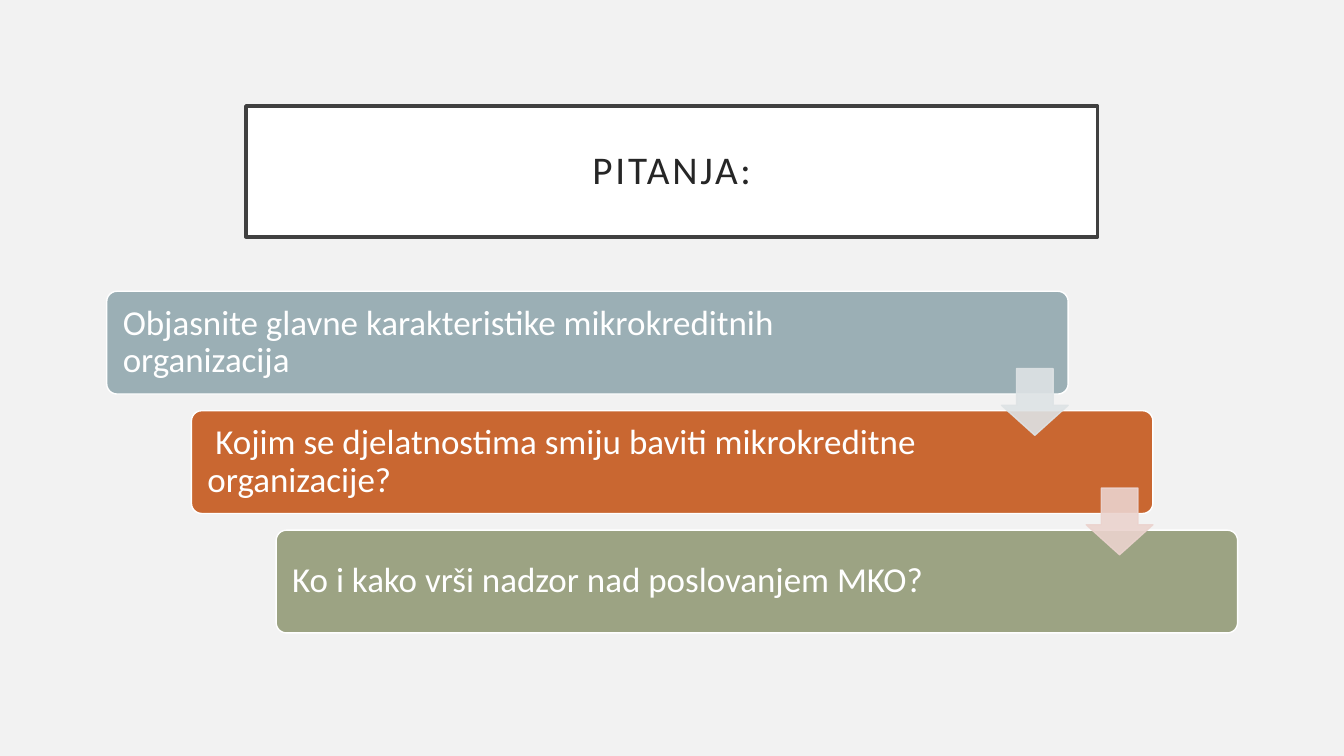
from lxml.etree import SubElement
from pptx import Presentation
from pptx.dml.color import RGBColor
from pptx.enum.shapes import MSO_SHAPE
from pptx.enum.text import MSO_ANCHOR, PP_ALIGN
from pptx.oxml.ns import qn
from pptx.util import Cm, Pt

COLOURS = {
    "background": "F2F2F2",
    "white": "FFFFFF",
    "title_border": "404040",
    "title_text": "262626",
    "blue_grey": "9BAFB5",
    "orange": "C96731",
    "olive": "9CA383",
    "pale_grey": "DEE3E5",
    "pale_rose": "EBD3CE",
}
QUESTIONS = [
    ("Objasnite glavne karakteristike mikrokreditnih organizacija", "blue_grey"),
    (" Kojim se djelatnostima smiju baviti mikrokreditne organizacije?", "orange"),
    ("Ko i kako vrši nadzor nad poslovanjem MKO?", "olive"),
]
ARROW_COLOURS = ["pale_grey", "pale_rose"]
TITLE_FRAME = {
    "word_wrap": True,
    "vertical_anchor": MSO_ANCHOR.MIDDLE,
    "margin_left": Cm(0.5),
    "margin_right": Cm(0.5),
    "margin_top": Cm(0.5),
    "margin_bottom": Cm(0.5),
}
QUESTION_FRAME = TITLE_FRAME | {
    "margin_left": Cm(0.33),
    "margin_right": Cm(2.97),
    "margin_top": Cm(0.33),
    "margin_bottom": Cm(0.33),
}


def rgb(colour):
    return RGBColor.from_string(COLOURS[colour])


def apply_format(target, values):
    for attribute, value in values.items():
        setattr(target, attribute, value)


def paint(part, fill, border, width):
    part.fill.solid()
    part.fill.fore_color.rgb = rgb(fill)
    part.line.color.rgb = rgb(border)
    part.line.width = Pt(width)


def write(part, wording, frame, size, colour, alignment):
    apply_format(part.text_frame, frame)
    paragraph = part.text_frame.paragraphs[0]
    apply_format(paragraph, {"alignment": alignment, "line_spacing": 0.9})
    run = paragraph.add_run()
    run.text = wording
    apply_format(run.font, {"name": "Calibri", "size": Pt(size), "bold": False})
    run.font.color.rgb = rgb(colour)
    return run


def add_part(slide, preset, box, adjustments):
    part = slide.shapes.add_shape(preset, *map(Cm, box))
    part.shadow.inherit = False
    for index, value in enumerate(adjustments):
        part.adjustments[index] = value
    return part


def place_title(slide, box):
    title = slide.shapes.title
    apply_format(title, dict(zip(("left", "top", "width", "height"), map(Cm, box))))
    paint(title, "white", "title_border", 2.5)
    run = write(title, "PITANJA:", TITLE_FRAME, 28, "title_text", PP_ALIGN.CENTER)
    run.font._element.set("spc", "200")


def add_question(slide, box, wording, colour):
    question = add_part(slide, MSO_SHAPE.ROUNDED_RECTANGLE, box, [0.1])
    paint(question, colour, "white", 1)
    write(question, wording, QUESTION_FRAME, 25, "white", PP_ALIGN.LEFT)


def add_arrow(slide, box, colour):
    arrow = add_part(slide, MSO_SHAPE.DOWN_ARROW, box, [0.45, 0.55])
    apply_format(arrow.adjustments, {})
    arrow.adjustments[0], arrow.adjustments[1] = 0.55, 0.45
    paint(arrow, colour, colour, 1)
    for tint in arrow._element.spPr.iter(qn("a:srgbClr")):
        SubElement(tint, qn("a:alpha"), val="90000")


def add_staircase(slide, box):
    left, top, width, height = box
    step_width, step_height, arrow_size, arrow_drop = 24.23, 2.59, 1.68, 1.95
    shift = (width - step_width) / (len(QUESTIONS) - 1)
    drop = (height - step_height) / (len(QUESTIONS) - 1)
    for level, (wording, colour) in enumerate(QUESTIONS):
        step = (left + level * shift, top + level * drop, step_width, step_height)
        add_question(slide, step, wording, colour)
    for level, colour in enumerate(ARROW_COLOURS):
        arrow_left = left + level * shift + step_width - arrow_size
        arrow_top = top + level * drop + arrow_drop
        add_arrow(slide, (arrow_left, arrow_top, arrow_size, arrow_size), colour)


def main():
    presentation = Presentation()
    apply_format(presentation, {"slide_width": Cm(33.87), "slide_height": Cm(19.05)})
    slide = presentation.slides.add_slide(presentation.slide_layouts[5])
    slide.background.fill.solid()
    slide.background.fill.fore_color.rgb = rgb("background")
    place_title(slide, (6.2, 2.67, 21.46, 3.3))
    add_staircase(slide, (2.69, 7.34, 28.5, 8.61))
    presentation.save("out.pptx")


if __name__ == "__main__":
    main()
